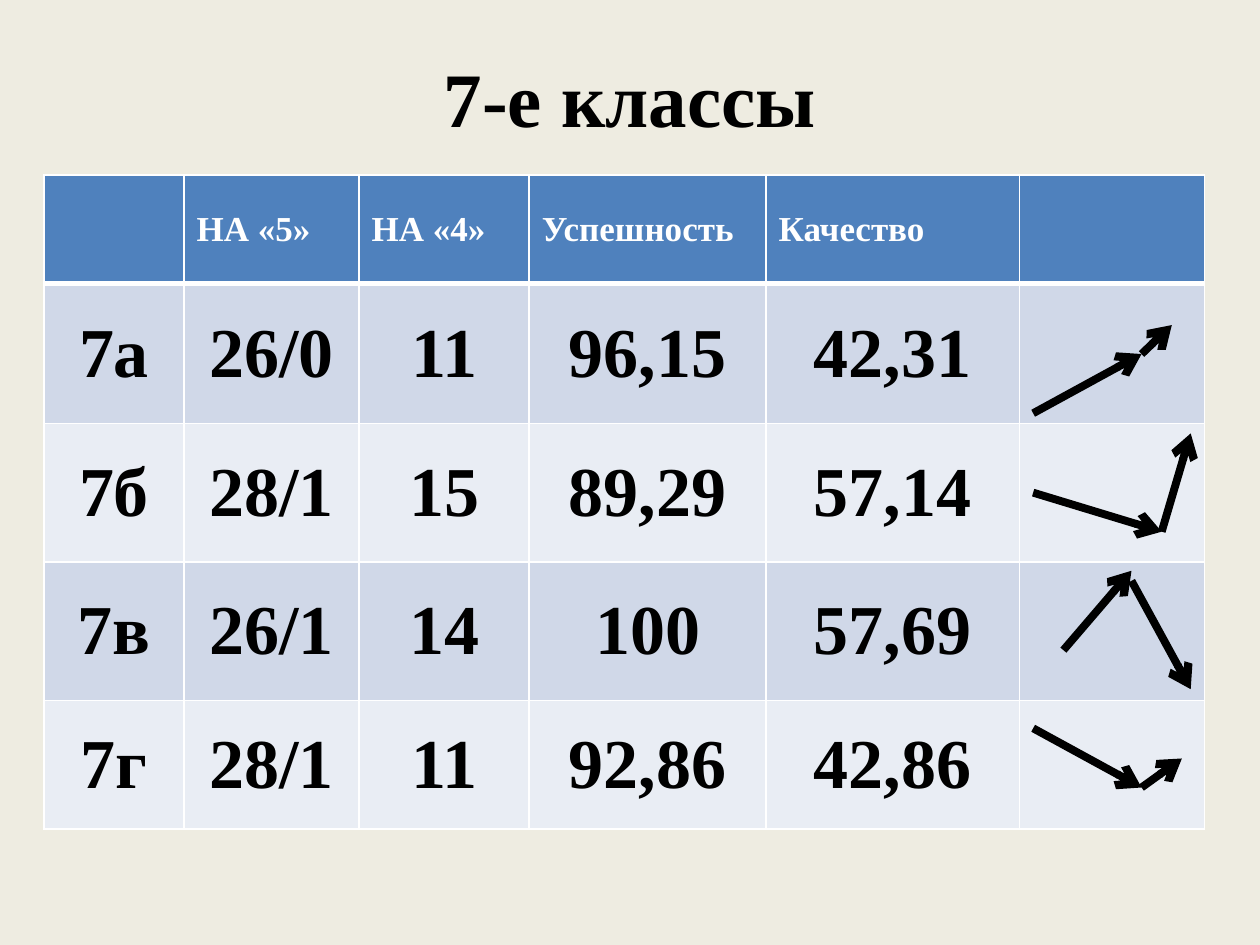
from dataclasses import dataclass
from lxml.etree import SubElement
from pptx import Presentation
from pptx.dml.color import RGBColor
from pptx.enum.shapes import MSO_CONNECTOR
from pptx.enum.text import MSO_ANCHOR, PP_ALIGN
from pptx.oxml.ns import qn
from pptx.util import Inches, Pt


@dataclass(frozen=True)
class Theme:
    font: str = "Times New Roman"
    back: str = "EEECE1"
    ink: str = "000000"
    white: str = "FFFFFF"
    head: str = "4F81BD"
    bands: tuple = ("D0D8E8", "E9EDF4")
    title: int = 44
    label: int = 20
    value: int = 40
    thin: float = 1
    thick: float = 3
    arrow: float = 4.5


THEME = Theme()
COLS = (1.11, 1.39, 1.35, 1.88, 2.01, 1.47)
ROWS = (0.86, 1.11, 1.1, 1.1, 1.02)
GRADES = (
    ("", "НА «5»", "НА «4»", "Успешность", "Качество", ""),
    ("7а", "26/0", "11", "96,15", "42,31", ""),
    ("7б", "28/1", "15", "89,29", "57,14", ""),
    ("7в", "26/1", "14", "100", "57,69", ""),
    ("7г", "28/1", "11", "92,86", "42,86", ""),
)
TRENDS = (
    ((8.2, 3.28), (9.06, 2.81)),
    ((8.2, 3.91), (9.22, 4.22)),
    ((8.44, 5.16), (8.98, 4.53)),
    ((8.2, 5.78), (9.06, 6.25)),
    ((9.06, 2.81), (9.3, 2.58)),
    ((9.22, 4.22), (9.45, 3.44)),
    ((8.98, 4.61), (9.45, 5.47)),
    ((9.06, 6.25), (9.38, 6.02)),
)


def color(code):
    return RGBColor.from_string(code)


def write(frame, text, size, ink=THEME.ink, align=PP_ALIGN.CENTER):
    para = frame.paragraphs[0]
    para.alignment = align
    run = para.add_run()
    run.text = text
    font = run.font
    font.name, font.size, font.bold = THEME.font, Pt(size), True
    font.color.rgb = color(ink)


def add_title(slide, text):
    title = slide.shapes.title
    title.left, title.top = Inches(0.5), Inches(0.3)
    title.width, title.height = Inches(9), Inches(0.93)
    title.text_frame.vertical_anchor = MSO_ANCHOR.MIDDLE
    write(title.text_frame, text, size=THEME.title)


def add_edges(cell, row):
    props = cell._tc.get_or_add_tcPr()
    for side in "LRTB":
        heavy = (row, side) in ((0, "B"), (1, "T"))
        width = THEME.thick if heavy else THEME.thin
        edge = SubElement(props, qn(f"a:ln{side}"), w=str(Pt(width)))
        fill = SubElement(edge, qn("a:solidFill"))
        SubElement(fill, qn("a:srgbClr"), val=THEME.white)


def fill_cell(cell, row, text):
    add_edges(cell, row)
    cell.vertical_anchor = MSO_ANCHOR.MIDDLE
    cell.fill.solid()
    shade = THEME.bands[(row - 1) % 2] if row else THEME.head
    cell.fill.fore_color.rgb = color(shade)
    if text and row:
        write(cell.text_frame, text, size=THEME.value)
    elif text:
        write(cell.text_frame, text, size=THEME.label,
              ink=THEME.white, align=PP_ALIGN.LEFT)


def add_grades(slide):
    table = slide.shapes.add_table(
        len(ROWS), len(COLS), Inches(0.35), Inches(1.39),
        Inches(sum(COLS)), Inches(sum(ROWS))).table
    for column, width in zip(table.columns, COLS):
        column.width = Inches(width)
    for row, height in enumerate(ROWS):
        table.rows[row].height = Inches(height)
        for col, text in enumerate(GRADES[row]):
            fill_cell(table.cell(row, col), row, text)


def add_arrow(slide, start, end):
    points = [Inches(n) for n in start + end]
    arrow = slide.shapes.add_connector(MSO_CONNECTOR.STRAIGHT, *points)
    arrow.line.color.rgb = color(THEME.ink)
    arrow.line.width = Pt(THEME.arrow)
    SubElement(arrow.line._get_or_add_ln(), qn("a:tailEnd"), type="arrow")
    SubElement(arrow._element.spPr, qn("a:effectLst"))


def main():
    deck = Presentation()
    deck.slide_width, deck.slide_height = Inches(10), Inches(7.5)
    slide = deck.slides.add_slide(deck.slide_layouts[5])
    slide.background.fill.solid()
    slide.background.fill.fore_color.rgb = color(THEME.back)
    add_title(slide, "7-е классы")
    add_grades(slide)
    for start, end in TRENDS:
        add_arrow(slide, start, end)
    deck.save("out.pptx")


if __name__ == "__main__":
    main()
